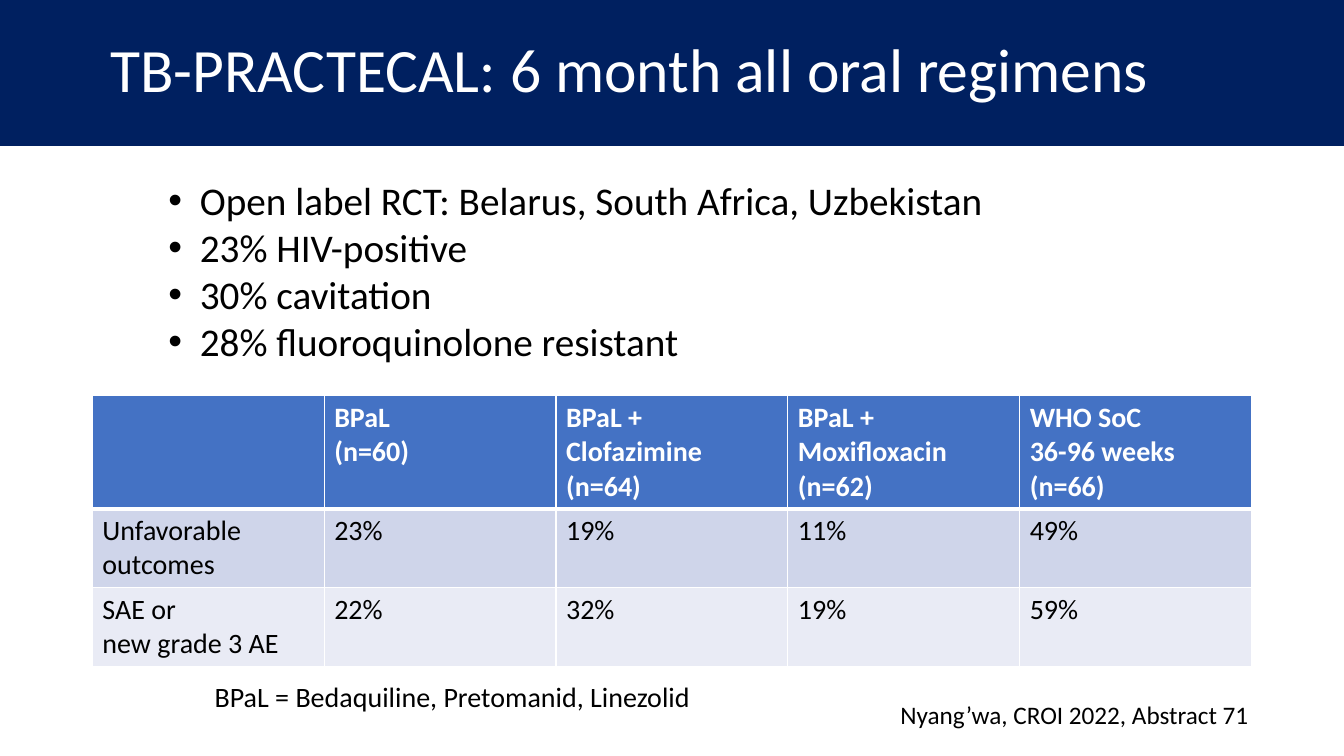
from lxml import etree
from pptx import Presentation
from pptx.dml.color import RGBColor
from pptx.enum.shapes import MSO_SHAPE
from pptx.enum.text import MSO_ANCHOR, PP_ALIGN
from pptx.oxml.ns import qn
from pptx.util import Pt

PX = 9525
RECT = MSO_SHAPE.RECTANGLE
MIDDLE = MSO_ANCHOR.MIDDLE
LEFT = PP_ALIGN.LEFT
FONT = "Calibri"
COLORS = {
    "navy": "002060",
    "header": "4472C4",
    "band_dark": "CFD5EA",
    "band_light": "E9EBF5",
    "white": "FFFFFF",
    "black": "000000",
}

BULLETS = [
    "Open label RCT: Belarus, South Africa, Uzbekistan",
    "23% HIV-positive",
    "30% cavitation",
    "28% fluoroquinolone resistant",
]
# Row height, fill, cell texts
RESULTS = [
    (107, "header", ["", "BPaL\n(n=60)", "BPaL + Clofazimine\n(n=64)",
                     "BPaL + Moxifloxacin\n(n=62)",
                     "WHO SoC\n36-96 weeks\n(n=66)"]),
    (75, "band_dark", ["Unfavorable outcomes", "23%", "19%", "11%", "49%"]),
    (75, "band_light", ["SAE or\nnew grade 3 AE", "22%", "32%", "19%", "59%"]),
]


def emu(box):
    return [v * PX for v in box]


def rgb(name):
    return RGBColor.from_string(COLORS[name])


def fill_solid(target, color):
    target.fill.solid()
    target.fill.fore_color.rgb = rgb(color)


def write(tf, text, size, color="black", bold=False):
    tf.text = text
    for p in tf.paragraphs:
        p.alignment = LEFT
        for r in p.runs:
            r.font.name = FONT
            r.font.size = Pt(size)
            r.font.bold = bold
            r.font.color.rgb = rgb(color)


def add_title(slide, box, text):
    s = slide.shapes.add_shape(RECT, *emu(box))
    s.shadow.inherit = False
    fill_solid(s, "navy")
    s.line.fill.background()
    tf = s.text_frame
    tf.word_wrap = True
    tf.vertical_anchor = MIDDLE
    tf.margin_left = 105 * PX
    write(tf, text, 44, "white")
    tf.paragraphs[0].line_spacing = 0.9


def add_text(slide, box, text, size):
    tf = slide.shapes.add_textbox(*emu(box)).text_frame
    tf.word_wrap = True
    write(tf, text, size)
    return tf


def add_bullets(slide, box, items):
    tf = add_text(slide, box, "\n".join(items), 28)
    indent = 30 * PX
    for p in tf.paragraphs:
        pPr = p._p.get_or_add_pPr()
        pPr.set("marL", str(indent))
        pPr.set("indent", str(-indent))
        etree.SubElement(pPr, qn("a:buFont")).set("typeface", "Arial")
        etree.SubElement(pPr, qn("a:buChar")).set("char", "•")


def set_borders(cell, top, bottom):
    """White cell borders, with the top and bottom widths in points."""
    tcPr = cell._tc.get_or_add_tcPr()
    for side, width in (("L", 1), ("R", 1), ("T", top), ("B", bottom)):
        ln = etree.SubElement(tcPr, qn(f"a:ln{side}"), w=str(Pt(width)))
        fill = etree.SubElement(ln, qn("a:solidFill"))
        etree.SubElement(fill, qn("a:srgbClr")).set("val", COLORS["white"])


def add_results(slide, box, rows):
    n_cols = len(rows[0][2])
    table = slide.shapes.add_table(len(rows), n_cols, *emu(box)).table
    for i, (height, fill, texts) in enumerate(rows):
        table.rows[i].height = height * PX
        is_header = i == 0
        for j, text in enumerate(texts):
            cell = table.cell(i, j)
            set_borders(cell, 3 if i == 1 else 1, 3 if is_header else 1)
            fill_solid(cell, fill)
            write(cell.text_frame, text, 20,
                  "white" if is_header else "black", is_header)


def build_slide(prs):
    slide = prs.slides.add_slide(prs.slide_layouts[6])
    add_title(slide, (0, 0, 1280, 139),
              "TB-PRACTECAL: 6 month all oral regimens")
    add_results(slide, (88, 377, 1104, 257), RESULTS)
    add_text(slide, (848, 661, 361, 38), "Nyang’wa, CROI 2022, Abstract 71", 18)
    add_bullets(slide, (151, 163, 803, 191), BULLETS)
    add_text(slide, (195, 642, 476, 42),
             "BPaL = Bedaquiline, Pretomanid, Linezolid", 20)


def main():
    prs = Presentation()
    prs.slide_width, prs.slide_height = emu((1280, 720))
    build_slide(prs)
    prs.save("out.pptx")


if __name__ == "__main__":
    main()
